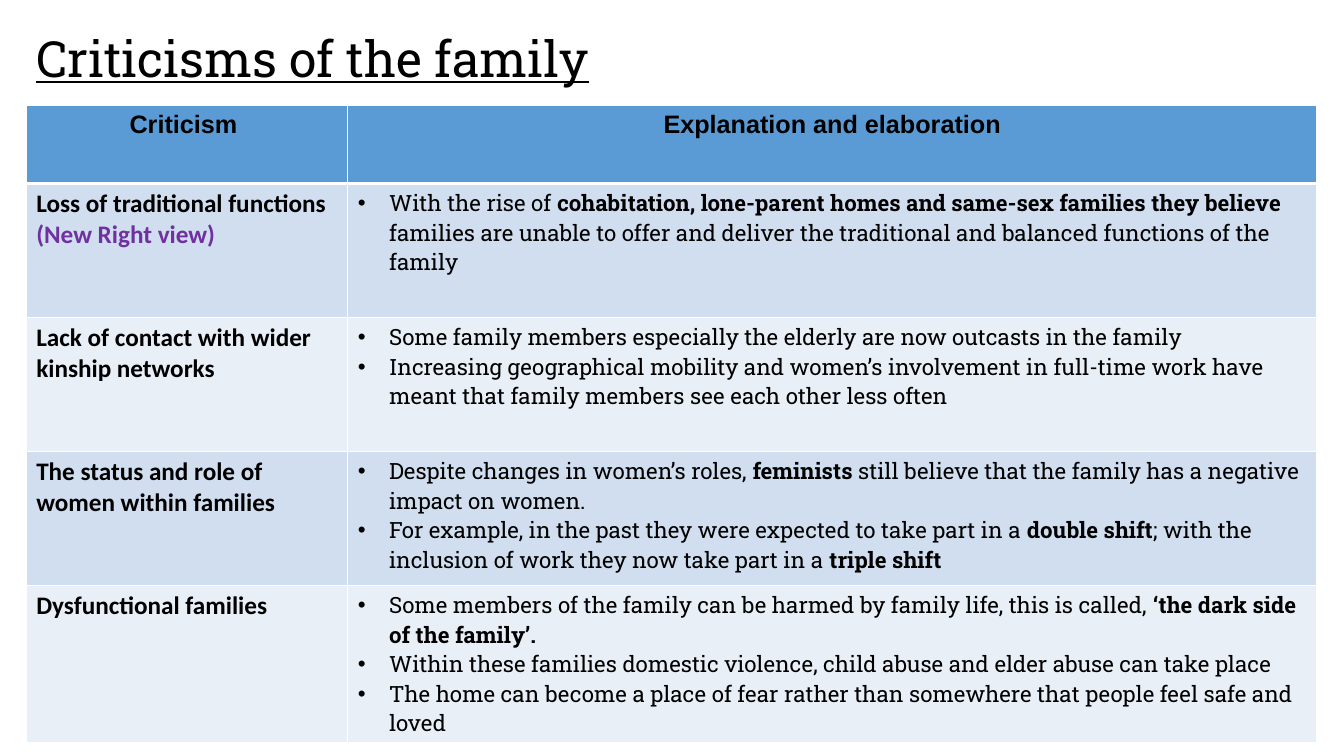
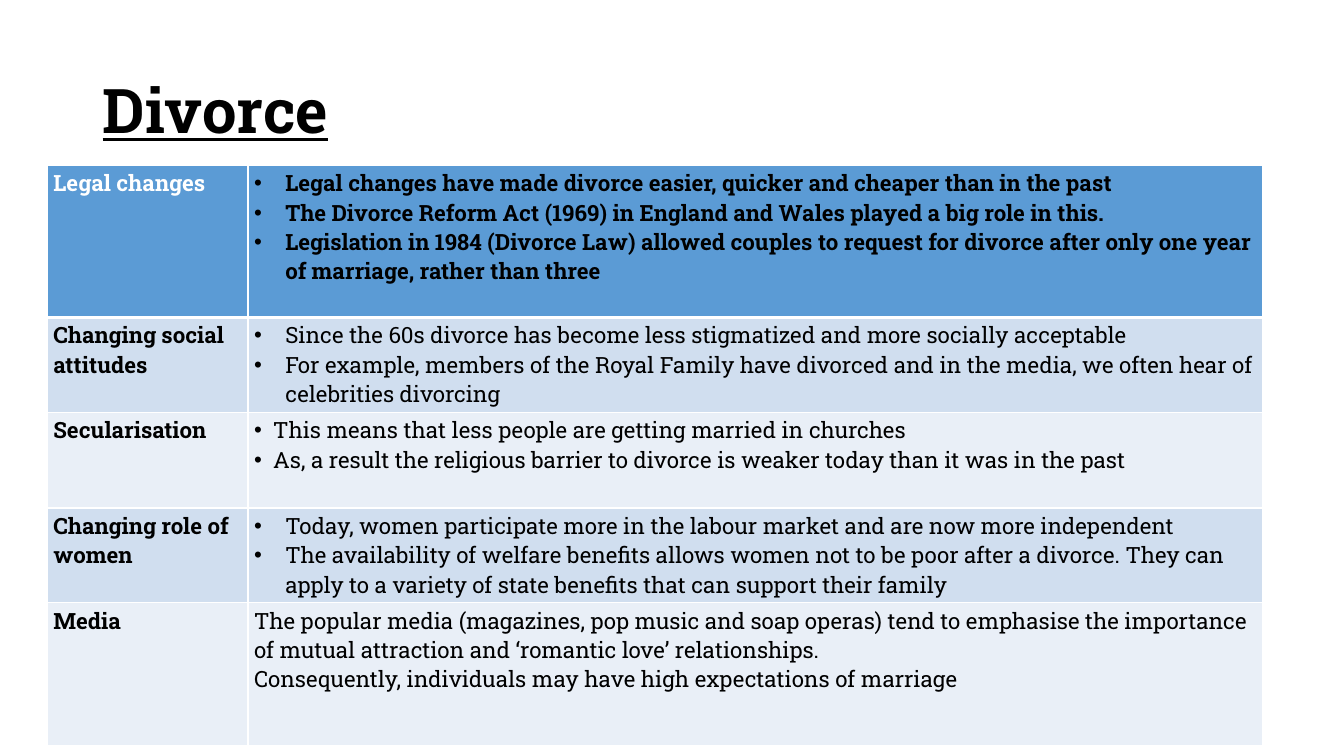
from lxml import etree
from pptx import Presentation
from pptx.dml.color import RGBColor
from pptx.enum.text import MSO_ANCHOR, PP_ALIGN
from pptx.oxml.ns import qn
from pptx.util import Inches, Pt

MIDDLE = MSO_ANCHOR.MIDDLE
CENTER = PP_ALIGN.CENTER
LEFT = PP_ALIGN.LEFT

COLORS = {
    "text": "000000",
    "white": "FFFFFF",
    "header": "5B9BD5",
    "dark_band": "D0DEEF",
    "light_band": "E9EFF7",
    "note": "7030A0",
}
SLAB = "Roboto Slab"
BODY = {"size": 16, "font": SLAB}
LABEL = {"size": 18, "font": "Calibri", "bold": True}
HEADING = {"size": 18, "font": "Arial", "bold": True}
WIDE_INDENT = 0.31
NARROW_INDENT = 0.19

# Text between ** marks is bold.
CRITICISMS = [
    ("Loss of traditional functions ", [
        "With the rise of **cohabitation, lone-parent homes and same-sex families they believe "
        "**families are unable to offer and deliver the traditional and balanced functions of "
        "the family",
    ]),
    ("Lack of contact with wider kinship networks", [
        "Some family members especially the elderly are now outcasts in the family",
        "Increasing geographical mobility and women’s involvement in full-time work have meant "
        "that family members see each other less often",
    ]),
    ("The status and role of women within families", [
        "Despite changes in women’s roles, **feminists** still believe that the family has a "
        "negative impact on women.",
        "For example, in the past they were expected to take part in a **double shift**; with "
        "the inclusion of work they now take part in a **triple shift**",
    ]),
    ("Dysfunctional families", [
        "Some members of the family can be harmed by family life, this is called, "
        "**‘the dark side of the family’.**",
        "Within these families domestic violence, child abuse and elder abuse can take place",
        "The home can become a place of fear rather than somewhere that people feel safe and "
        "loved",
    ]),
]

DIVORCE_REASONS = [
    ("Legal changes", WIDE_INDENT, [
        "Legal changes have made divorce easier, quicker and cheaper than in the past",
        "The Divorce Reform Act (1969) in England and Wales played a big role in this.",
        "Legislation in 1984 (Divorce Law) allowed couples to request for divorce after only "
        "one year of marriage, rather than three",
    ]),
    ("Changing social attitudes", WIDE_INDENT, [
        "Since the 60s divorce has become less stigmatized and more socially acceptable",
        "For example, members of the Royal Family have divorced and in the media, we often hear "
        "of celebrities divorcing",
    ]),
    ("Secularisation", NARROW_INDENT, [
        "This means that less people are getting married in churches",
        "As, a result the religious barrier to divorce is weaker today than it was in the past",
    ]),
    ("Changing role of women", WIDE_INDENT, [
        "Today, women participate more in the labour market and are now more independent",
        "The availability of welfare benefits allows women not to be poor after a divorce. They "
        "can apply to a variety of state benefits that can support their family",
    ]),
    ("Media", 0, [
        "The popular media (magazines, pop music and soap operas) tend to emphasise the "
        "importance of mutual attraction and ‘romantic love’ relationships.",
        "Consequently, individuals may have high expectations of marriage",
    ]),
]


def add_span(para, text, size, font, color="text", bold=False, underline=False):
    span = para.add_run()
    span.text = text
    span.font.size = Pt(size)
    span.font.name = font
    span.font.bold = bold
    span.font.underline = underline
    span.font.color.rgb = RGBColor.from_string(COLORS[color])


def add_marked_text(para, text, bold=False, **style):
    """Add text, making the parts between ** marks bold."""
    for index, part in enumerate(text.split("**")):
        if part:
            add_span(para, part, bold=bold or index % 2 == 1, **style)


def add_bullet(para, indent):
    properties = para._p.get_or_add_pPr()
    properties.set("marL", str(Inches(indent)))
    properties.set("indent", str(-Inches(indent)))
    color = etree.SubElement(properties, qn("a:buClr"))
    etree.SubElement(color, qn("a:srgbClr"), val=COLORS["text"])
    etree.SubElement(properties, qn("a:buFont"), typeface="Arial")
    etree.SubElement(properties, qn("a:buChar"), char="•")


def set_borders(cell, top, bottom):
    """Draw white cell borders; top and bottom are widths in points."""
    properties = cell._tc.get_or_add_tcPr()
    widths = {"a:lnL": 1, "a:lnR": 1, "a:lnT": top, "a:lnB": bottom}
    for position, (tag, width) in enumerate(widths.items()):
        line = etree.Element(qn(tag), w=str(Pt(width)))
        fill = etree.SubElement(line, qn("a:solidFill"))
        etree.SubElement(fill, qn("a:srgbClr"), val=COLORS["white"])
        properties.insert(position, line)


def write_cell(cell, texts, indent=0, align=LEFT, **style):
    frame = cell.text_frame
    for index, text in enumerate(texts):
        para = frame.paragraphs[0] if index == 0 else frame.add_paragraph()
        para.alignment = align
        if indent:
            add_bullet(para, indent)
        add_marked_text(para, text, **style)


def add_title(page, text, left, top, width, height, **style):
    box = page.shapes.add_textbox(Inches(left), Inches(top), Inches(width), Inches(height))
    frame = box.text_frame
    frame.word_wrap = True
    frame.vertical_anchor = MIDDLE
    para = frame.paragraphs[0]
    para.line_spacing = 0.9
    add_span(para, text, font=SLAB, underline=True, **style)


def add_banded_table(page, left, top, columns, rows, margin_x, margin_y):
    """Add an empty table with a header row and alternating bands."""
    frame = page.shapes.add_table(len(rows), len(columns), Inches(left), Inches(top),
                                  Inches(sum(columns)), Inches(sum(rows)))
    table = frame.table
    table.horz_banding = False
    for column, width in zip(table.columns, columns):
        column.width = Inches(width)
    for index, (row, height) in enumerate(zip(table.rows, rows)):
        row.height = Inches(height)
        band = "dark_band" if index % 2 else "light_band"
        for cell in row.cells:
            cell.margin_left = cell.margin_right = Inches(margin_x)
            cell.margin_top = cell.margin_bottom = Inches(margin_y)
            cell.fill.solid()
            cell.fill.fore_color.rgb = RGBColor.from_string(
                COLORS[band if index else "header"])
            set_borders(cell, top=3 if index == 1 else 1, bottom=1 if index else 3)
    return table


def build_criticisms(page):
    add_title(page, "Criticisms of the family", 0.26, 0.29, 6.73, 0.63, size=35.6)
    table = add_banded_table(page, 0.26, 1.05, [3.19, 9.61],
                             [0.77, 1.33, 1.33, 1.33, 1.56], 0.1, 0.05)
    for column, heading in enumerate(["Criticism ", "Explanation and elaboration"]):
        write_cell(table.cell(0, column), [heading], align=CENTER, **HEADING)
    for row, (label, points) in enumerate(CRITICISMS, start=1):
        write_cell(table.cell(row, 0), [label], **LABEL)
        write_cell(table.cell(row, 1), points, indent=WIDE_INDENT, **BODY)
    first_label = table.cell(1, 0).text_frame.paragraphs[0]
    add_span(first_label, "(New Right view)", color="note", **LABEL)


def build_divorce(page):
    add_title(page, "Divorce", 0.92, 0.4, 11.5, 1.45, size=44, bold=True)
    table = add_banded_table(page, 0.47, 1.64, [1.99, 10.06],
                             [1.51, 0.94, 0.95, 0.94, 1.42], 0.06, 0.03)
    for row, (label, indent, points) in enumerate(DIVORCE_REASONS):
        is_header = row == 0
        write_cell(table.cell(row, 0), [label], bold=True,
                   color="white" if is_header else "text", **BODY)
        write_cell(table.cell(row, 1), points, indent=indent, bold=is_header, **BODY)


def main():
    deck = Presentation()
    deck.slide_width = Inches(13.33)
    deck.slide_height = Inches(7.5)
    blank = deck.slide_layouts[6]
    for build in (build_criticisms, build_divorce):
        build(deck.slides.add_slide(blank))
    deck.save("out.pptx")


if __name__ == "__main__":
    main()
